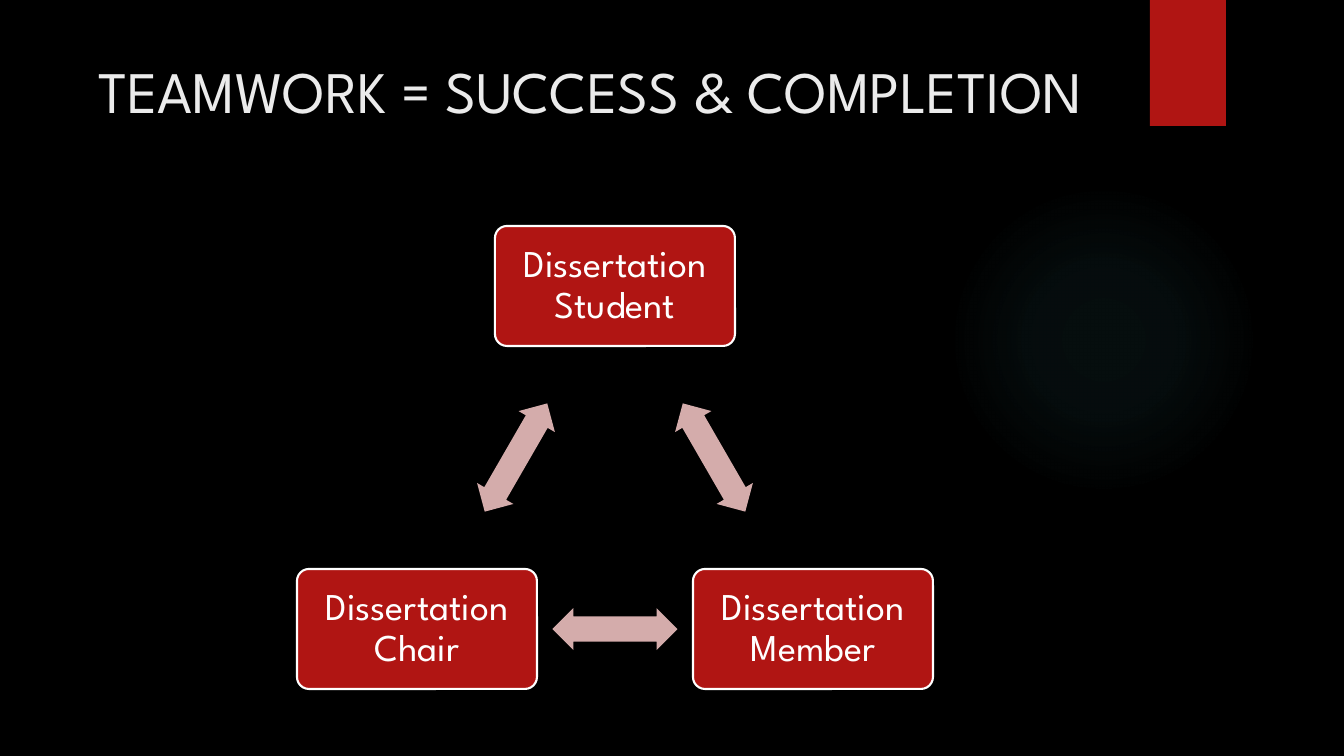
from math import atan2, degrees
from lxml.etree import SubElement
from pptx import Presentation
from pptx.dml.color import RGBColor
from pptx.enum.shapes import MSO_SHAPE
from pptx.enum.text import MSO_ANCHOR, PP_ALIGN
from pptx.oxml.ns import qn
from pptx.util import Emu, Pt

TITLE = "TEAMWORK = SUCCESS & COMPLETION"
ROLES = [
    ("Dissertation Student", 615, 286),
    ("Dissertation Member", 813, 629),
    ("Dissertation Chair", 417, 629),
]
GLOW_STOPS = [(0, 7), (36, 6), (69, 0), (100, 0)]
COLORS = {"back": "000000", "red": "B01513", "arrow": "D4ACAB",
          "title": "EBEBEB", "white": "FFFFFF", "glow": "50B9C1"}
FONT = "League Spartan"
BOX_W, BOX_H = 240, 120
ARROW_W, ARROW_H = 125, 42


def px(n):
    return Emu(round(n * 914400 / 100.8))


def color(name):
    return RGBColor.from_string(COLORS[name])


def add_shape(kind, x, y, w, h, fill):
    s = slide.shapes.add_shape(kind, px(x), px(y), px(w), px(h))
    s.shadow.inherit = False
    s.fill.solid()
    s.fill.fore_color.rgb = color(fill)
    s.line.fill.background()
    return s


def set_text(s, text, size, name, inset_x, inset_y, anchor):
    tf = s.text_frame
    tf.word_wrap = True
    tf.vertical_anchor = anchor
    tf.margin_left = tf.margin_right = px(inset_x)
    tf.margin_top = tf.margin_bottom = px(inset_y)
    p = tf.paragraphs[0]
    p.text = text
    p.alignment = PP_ALIGN.CENTER
    p.font.name = FONT
    p.font.size = Pt(size)
    p.font.color.rgb = color(name)
    return p


def set_glow(s):
    s.fill.gradient()
    grad = s._element.spPr.find(qn("a:gradFill"))
    for child in list(grad):
        grad.remove(child)
    stops = SubElement(grad, qn("a:gsLst"))
    for pos, alpha in GLOW_STOPS:
        gs = SubElement(stops, qn("a:gs"), pos=str(pos * 1000))
        clr = SubElement(gs, qn("a:srgbClr"), val=COLORS["glow"])
        SubElement(clr, qn("a:alpha"), val=str(alpha * 1000))
    circle = SubElement(grad, qn("a:path"), path="circle")
    SubElement(circle, qn("a:fillToRect"), l="50000", t="50000", r="50000", b="50000")


prs = Presentation()
prs.slide_width, prs.slide_height = px(1344), px(756)
slide = prs.slides.add_slide(prs.slide_layouts[6])
slide.background.fill.solid()
slide.background.fill.fore_color.rgb = color("back")

set_glow(add_shape(MSO_SHAPE.OVAL, 949, 185, 310, 310, "glow"))
add_shape(MSO_SHAPE.RECTANGLE, 1150, 0, 76, 126, "red")

title = slide.shapes.add_textbox(px(72), px(50), px(1037), px(154))
set_text(title, TITLE, 42, "title", 10, 5, MSO_ANCHOR.TOP)

for i, (role, cx, cy) in enumerate(ROLES):
    box = add_shape(MSO_SHAPE.ROUNDED_RECTANGLE, cx - BOX_W / 2, cy - BOX_H / 2,
                    BOX_W, BOX_H, "red")
    box.adjustments[0] = 0.1
    box.line.color.rgb = color("white")
    box.line.width = Pt(1.5)
    p = set_text(box, role, 27, "white", 11, 11, MSO_ANCHOR.MIDDLE)
    p.line_spacing = 0.9

    _, nx, ny = ROLES[(i + 1) % len(ROLES)]
    arrow = add_shape(MSO_SHAPE.LEFT_RIGHT_ARROW, (cx + nx - ARROW_W) / 2,
                      (cy + ny - ARROW_H) / 2, ARROW_W, ARROW_H, "arrow")
    arrow.adjustments[0] = 0.6
    arrow.adjustments[1] = 0.5
    arrow.rotation = round(degrees(atan2(ny - cy, nx - cx))) % 360

prs.save("out.pptx")
